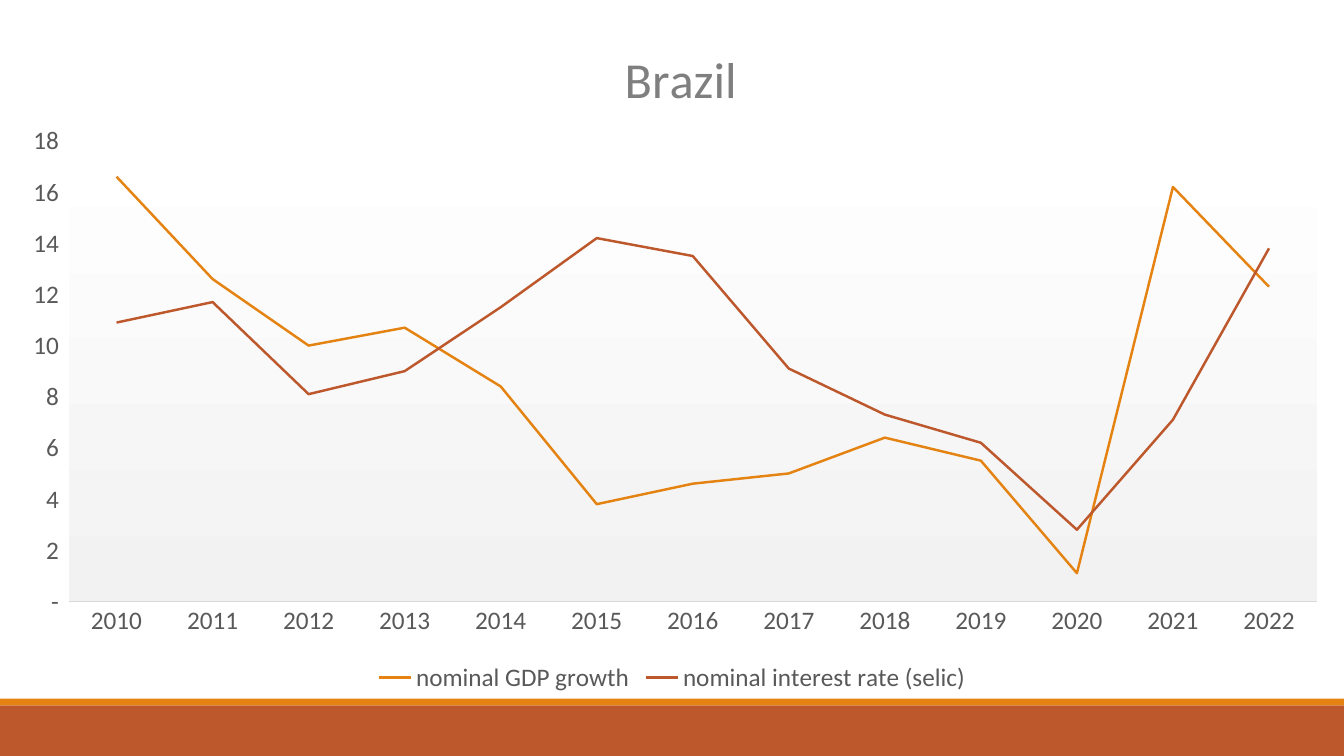
from dataclasses import dataclass

from lxml.etree import fromstring
from pptx import Presentation
from pptx.chart.data import CategoryChartData
from pptx.dml.color import RGBColor
from pptx.enum.chart import XL_CHART_TYPE as ChartType, XL_LEGEND_POSITION as LegendPos
from pptx.enum.chart import XL_TICK_MARK as Tick
from pptx.enum.shapes import MSO_SHAPE as Shape
from pptx.oxml.ns import nsdecls, qn
from pptx.util import Inches, Pt


@dataclass(frozen=True)
class Theme:
    """Colours, font and type sizes of the slide."""
    font: str = "Calibri"
    orange: str = "E48312"
    rust: str = "BD582C"
    white: str = "FFFFFF"
    shade: str = "F2F2F2"
    axis: str = "D9D9D9"
    label: str = "595959"
    title: str = "7F7F7F"
    label_size: float = 18
    title_size: float = 36
    line_width: float = 1.75
    axis_width: float = 0.75


THEME = Theme()
WIDTH, HEIGHT = Inches(13.33), Inches(7.5)
CHART_SHARE, STRIPE_SHARE, BAND_SHARE = 0.923, 0.924, 0.933
NUMBER_FORMAT = '_(* #,##0_);_(* \\(#,##0\\);_(* "-"_);_(@_)'
YEARS = [str(year) for year in range(2010, 2023)]
SERIES = [
    ("nominal GDP growth", THEME.orange,
     [16.6, 12.6, 10, 10.7, 8.4, 3.8, 4.6, 5, 6.4, 5.5, 1.1, 16.2, 12.3]),
    ("nominal interest rate (selic)", THEME.rust,
     [10.9, 11.7, 8.1, 9, 11.5, 14.2, 13.5, 9.1, 7.3, 6.2, 2.8, 7.1, 13.8]),
]


def rgb(color):
    """Return a colour object for a hex string."""
    return RGBColor.from_string(color)


def set_font(font, size, color):
    """Apply the theme font with a size and colour."""
    font.name, font.size, font.bold = THEME.font, Pt(size), False
    font.color.rgb = rgb(color)


def add_band(slide, top, bottom, color):
    """Draw a full-width band between two shares of the slide height."""
    s = slide.shapes.add_shape(
        Shape.RECTANGLE, 0, int(HEIGHT * top), WIDTH, int(HEIGHT * (bottom - top)))
    s.shadow.inherit = False
    s.fill.solid()
    s.fill.fore_color.rgb = rgb(color)
    s.line.fill.background()


def set_layout(parent, index, target="", **shares):
    """Place a chart part by shares of the chart's size."""
    for old in parent.findall(qn("c:layout")):
        parent.remove(old)
    inner = f'<c:layoutTarget val="{target}"/>' if target else ""
    inner += "".join(f'<c:{key}Mode val="edge"/>' for key in "xy")
    inner += "".join(f'<c:{key} val="{value}"/>' for key, value in shares.items())
    parent.insert(index, fromstring(
        f'<c:layout {nsdecls("c")}><c:manualLayout>{inner}</c:manualLayout></c:layout>'))


def fill_properties(fill):
    """Return chart shape properties with a fill and no outline."""
    return fromstring(
        f'<c:spPr {nsdecls("c", "a")}>{fill}<a:ln><a:noFill/></a:ln></c:spPr>')


def fill_chart(chart):
    """Fill the chart white and shade its plot area downwards."""
    space = chart.element
    body = space.find(qn("c:chart"))
    plot_area = body.find(qn("c:plotArea"))
    body.addnext(fill_properties(
        f'<a:solidFill><a:srgbClr val="{THEME.white}"/></a:solidFill>'))
    stops = "".join(
        f'<a:gs pos="{pos}"><a:srgbClr val="{color}"/></a:gs>'
        for pos, color in ((0, THEME.white), (100000, THEME.shade)))
    plot_area.append(fill_properties(
        f'<a:gradFill><a:gsLst>{stops}</a:gsLst><a:lin ang="5400000" scaled="0"/></a:gradFill>'))
    set_layout(plot_area, 0, "inner", x=0.051, y=0.202, w=0.929, h=0.66)


def add_title(chart, text):
    """Set the chart title above the plot."""
    chart.has_title = True
    title = chart.chart_title
    title.include_in_layout = False
    p = title.text_frame.paragraphs[0]
    p.text = text
    set_font(p.runs[0].font, THEME.title_size, THEME.title)
    set_layout(title._element, 1, x=0.458, y=0.05)


def style_axes(chart):
    """Format both axes without gridlines or tick marks."""
    for axis in (chart.category_axis, chart.value_axis):
        axis.has_major_gridlines = False
        axis.major_tick_mark = axis.minor_tick_mark = Tick.NONE
        set_font(axis.tick_labels.font, THEME.label_size, THEME.label)
    line = chart.category_axis.format.line
    line.color.rgb, line.width = rgb(THEME.axis), Pt(THEME.axis_width)
    values = chart.value_axis
    values.format.line.fill.background()
    values.minimum_scale, values.maximum_scale, values.major_unit = 0, 18, 2
    values.tick_labels.number_format = NUMBER_FORMAT
    values.tick_labels.number_format_is_linked = False


def add_line_chart(slide):
    """Add the line chart of growth and interest rates."""
    data = CategoryChartData()
    data.categories = YEARS
    for name, _, values in SERIES:
        data.add_series(name, values)
    chart = slide.shapes.add_chart(
        ChartType.LINE, 0, 0, WIDTH, int(HEIGHT * CHART_SHARE), data).chart
    set_font(chart.font, THEME.label_size, THEME.label)
    chart.plots[0].vary_by_categories = False
    for series, (_, color, _) in zip(chart.plots[0].series, SERIES):
        series.smooth = False
        line = series.format.line
        line.color.rgb, line.width = rgb(color), Pt(THEME.line_width)
    chart.has_legend = True
    chart.legend.position = LegendPos.BOTTOM
    chart.legend.include_in_layout = False
    set_font(chart.legend.font, THEME.label_size, THEME.label)
    style_axes(chart)
    add_title(chart, "Brazil")
    fill_chart(chart)


def main():
    """Build the slide and save it."""
    prs = Presentation()
    prs.slide_width, prs.slide_height = WIDTH, HEIGHT
    slide = prs.slides.add_slide(prs.slide_layouts[6])
    add_band(slide, BAND_SHARE, 1, THEME.rust)
    add_band(slide, STRIPE_SHARE, BAND_SHARE, THEME.orange)
    add_line_chart(slide)
    prs.save("out.pptx")


if __name__ == "__main__":
    main()
